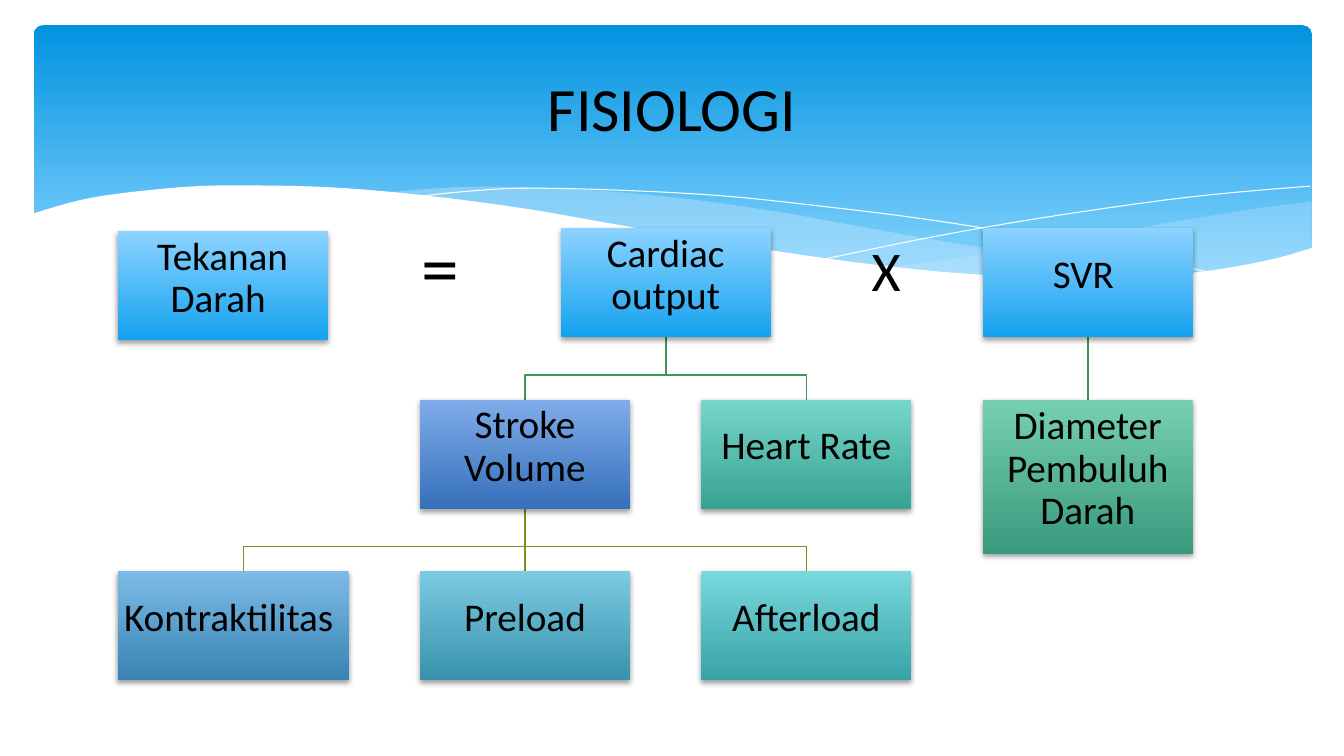
from lxml import etree
from pptx import Presentation
from pptx.dml.color import RGBColor
from pptx.enum.shapes import MSO_CONNECTOR, MSO_SHAPE
from pptx.enum.text import MSO_ANCHOR, PP_ALIGN
from pptx.oxml.ns import qn
from pptx.util import Pt

RECT, ROUND = MSO_SHAPE.RECTANGLE, MSO_SHAPE.ROUNDED_RECTANGLE
STRAIGHT, MIDDLE, CENTER = MSO_CONNECTOR.STRAIGHT, MSO_ANCHOR.MIDDLE, PP_ALIGN.CENTER

BLACK = RGBColor(0x00, 0x00, 0x00)
WHITE = RGBColor(0xFF, 0xFF, 0xFF)
MIST = RGBColor(0xC6, 0xE7, 0xFC)
GREEN = RGBColor(0x3D, 0x96, 0x53)
OLIVE = RGBColor(0x74, 0x93, 0x1C)
SKY = RGBColor(0x02, 0x93, 0xE0), RGBColor(0x83, 0xD3, 0xFE)
AZURE = RGBColor(0x8C, 0xD3, 0xFF), RGBColor(0x14, 0xA2, 0xEF)
INDIGO = RGBColor(0x80, 0xAC, 0xEA), RGBColor(0x35, 0x70, 0xBA)
STEEL = RGBColor(0x7D, 0xBB, 0xE6), RGBColor(0x38, 0x83, 0xB3)
TEAL = RGBColor(0x7B, 0xCA, 0xE2), RGBColor(0x39, 0x93, 0xAC)
AQUA = RGBColor(0x78, 0xD8, 0xDD), RGBColor(0x38, 0xA3, 0xA7)
MINT = RGBColor(0x76, 0xD7, 0xC9), RGBColor(0x38, 0xA2, 0x93)
JADE = RGBColor(0x76, 0xCF, 0xB2), RGBColor(0x3A, 0x9A, 0x7D)

FONT = "Calibri"
PAGE = 0, 0, 960, 540
WIDE, HIGH, GAP, BEND = 150, 78, 44.4, 27

MIST_TOP = [(937, 144), (897, 149), (826, 160.5), (747, 174.5), (700, 182), (635, 191)]
MIST_LOW = [(635, 191), (690, 196), (738, 199), (791, 200), (837, 198),
            (877, 192.5), (911.5, 185), (937, 178)]
BAND_TOP = [(857, 196.5), (803.5, 191), (744.5, 183), (677.5, 173), (604, 160),
            (560, 152), (506, 144), (446, 137.5), (383, 134), (330.5, 133.5), (275, 137.5)]
BAND_LOW = [(275, 137.5), (328, 143), (388, 152), (431, 160), (508, 173), (577, 183.5),
            (639, 191.5), (693.5, 197), (753, 200), (805, 200), (857, 196.5)]
FALL = [(297, 140.5), (330, 137), (371.5, 134.5), (432, 135.5), (511, 139.5),
        (584, 147), (667.5, 157.5), (763, 173.5), (871, 196)]
RISE = [(589, 185), (667.5, 169), (745, 155.5), (831.5, 143), (887, 137), (936, 133)]
CREST = [(22, 153), (57, 143), (91, 137.5), (140, 133), (186, 132.5), (240, 134),
         (303, 139.5), (375, 149), (429, 158.4), (508, 172), (579, 183), (641.5, 191),
         (698, 196), (776, 199.5), (829, 197), (873, 192), (911.5, 184.5), (937.5, 177)]
BASE = [(937.5, 237), (22, 237)]


def curve(knots, steps=4):
    """Return points of a smooth curve through the knots."""
    ends = [knots[0], *knots, knots[-1]]
    dots = []
    for a, b, c, d in zip(ends, ends[1:], ends[2:], ends[3:]):
        for step in range(steps):
            t = step / steps
            dots.append(tuple(
                q + t * ((r - p) + t * ((2 * p - 5 * q + 4 * r - s)
                                        + t * (3 * (q - r) + s - p))) / 2
                for p, q, r, s in zip(a, b, c, d)))
    return dots + [knots[-1]]


def trace(slide, dots, close=False):
    """Draw a plain outline through points."""
    spots = [(Pt(x), Pt(y)) for x, y in dots]
    pen = slide.shapes.build_freeform(*spots[0], scale=1.0)
    pen.add_line_segments(spots[1:], close=close)
    form = pen.convert_to_shape()
    form.shadow.inherit = False
    form.fill.background()
    form.line.fill.background()
    return form


def stroke(line, color, width):
    """Set the colour and width of a line."""
    line.color.rgb = color
    line.width = Pt(width)


def shade(shape, colors, end=1):
    """Fill a shape from top to bottom and clear its line and shadow."""
    shape.shadow.inherit = False
    shape.line.fill.background()
    shape.fill.gradient()
    shape.fill.gradient_angle = 270
    for stop, color, place in zip(shape.fill.gradient_stops, colors, (0, end)):
        stop.color.rgb = color
        stop.position = place


def style(frame, text, size, align=None):
    """Write one paragraph and format its run."""
    frame.word_wrap = True
    frame.text = text
    para = frame.paragraphs[0]
    para.alignment = align
    font = para.runs[0].font
    font.name, font.size, font.color.rgb = FONT, Pt(size), BLACK
    return para


def banner(slide, box):
    """Draw the blue header with its waves in the page box."""
    left, top, wide, _ = box
    back = slide.shapes.add_shape(ROUND, Pt(left + 24), Pt(top + 18), Pt(wide - 47), Pt(194.4))
    back.adjustments[0] = 0.034
    shade(back, SKY, 0.9)

    def move(dots):
        return [(left + x, top + y) for x, y in dots]

    waves = [(curve(MIST_TOP) + curve(MIST_LOW), MIST, 29),
             (curve(BAND_TOP) + curve(BAND_LOW), MIST, 40)]
    for dots, color, alpha in waves:
        wave = trace(slide, move(dots), True)
        wave.fill.solid()
        wave.fill.fore_color.rgb = color
        tint = wave.fill._xPr.find(".//" + qn("a:srgbClr"))
        etree.SubElement(tint, qn("a:alpha"), val=str(alpha * 1000))
    for knots in (FALL, RISE):
        stroke(trace(slide, move(curve(knots))).line, WHITE, 0)
    front = trace(slide, move(curve(CREST) + BASE), True)
    front.fill.solid()
    front.fill.fore_color.rgb = WHITE


def title(slide, box, text):
    """Place the title in its box, in front of the banner."""
    head = slide.shapes.title
    head.left, head.top, head.width, head.height = map(Pt, box)
    head.text_frame.vertical_anchor = MIDDLE
    style(head.text_frame, text, 44, CENTER)
    slide.shapes._spTree.append(head._element)


def card(slide, box, text, colors):
    """Draw one shaded card with its label."""
    shape = slide.shapes.add_shape(RECT, *map(Pt, box))
    shade(shape, colors)
    glow = etree.SubElement(shape._element.spPr.find(qn("a:effectLst")), qn("a:outerShdw"),
                            blurRad=str(Pt(4)), dist=str(Pt(2)), dir="5400000", rotWithShape="0")
    tone = etree.SubElement(glow, qn("a:srgbClr"), val=str(BLACK))
    etree.SubElement(tone, qn("a:alpha"), val="38000")
    frame = shape.text_frame
    frame.margin_left = frame.margin_right = frame.margin_top = Pt(1)
    frame.margin_bottom = Pt(11)
    frame.vertical_anchor = MIDDLE
    style(frame, text, 28, CENTER).line_spacing = 0.9


def link(slide, start, goal, top, color):
    """Join a card to one below it, straight or with a bend."""
    low = top + GAP
    if start == goal:
        wire = slide.shapes.add_connector(STRAIGHT, Pt(start), Pt(top), Pt(goal), Pt(low))
        etree.SubElement(wire._element.spPr, qn("a:effectLst"))
    else:
        mid = top + BEND
        wire = trace(slide, [(start, top), (start, mid), (goal, mid), (goal, low)])
    stroke(wire.line, color, 1.25)


def sign(slide, box, text, size):
    """Write one sign of the formula."""
    area = slide.shapes.add_textbox(*map(Pt, box))
    style(area.text_frame, text, size)


def chart(slide, box):
    """Draw the formula and its tree of factors in the box."""
    left, top, _, _ = box
    rows = [top + i * (HIGH + GAP) for i in range(3)]
    cols = [left + x for x in (0, 216, 417, 618)]
    mids = [x + WIDE / 2 for x in cols]
    hub = (mids[1] + mids[2]) / 2
    links = [(mids[3], mids[3], 0, GREEN), (hub, mids[2], 0, GREEN),
             (mids[1], mids[2], 1, OLIVE), (mids[1], mids[1], 1, OLIVE),
             (mids[1], left + 90, 1, OLIVE), (hub, mids[1], 0, GREEN)]
    for start, goal, row, color in links:
        link(slide, start, goal, rows[row] + HIGH, color)
    cards = [(cols[0], rows[0] + 2, WIDE, HIGH, "Tekanan Darah ", AZURE),
             (hub - WIDE / 2, rows[0], WIDE, HIGH, "Cardiac output", AZURE),
             (cols[1], rows[1], WIDE, HIGH, "Stroke Volume", INDIGO),
             (cols[0], rows[2], 165, HIGH, "Kontraktilitas ", STEEL),
             (cols[1], rows[2], WIDE, HIGH, "Preload", TEAL),
             (cols[2], rows[2], WIDE, HIGH, "Afterload", AQUA),
             (cols[2], rows[1], WIDE, HIGH, "Heart Rate", MINT),
             (cols[3], rows[0], WIDE, HIGH, "SVR ", AZURE),
             (cols[3], rows[1], WIDE, 110, "Diameter Pembuluh Darah", JADE)]
    for *place, text, colors in cards:
        card(slide, place, text, colors)
    sign(slide, (left + 210, top - 9.5, 56, 72.7), "=", 54)
    sign(slide, (left + 531.5, top + 2, 46, 55.7), "X", 40)


def main():
    """Build the slide and save it."""
    deck = Presentation()
    deck.slide_width, deck.slide_height = Pt(PAGE[2]), Pt(PAGE[3])
    slide = deck.slides.add_slide(deck.slide_layouts[5])
    banner(slide, PAGE)
    title(slide, (48, 27, 864, 98.5), "FISIOLOGI")
    chart(slide, (84, 163, 768, 322.8))
    deck.save("out.pptx")


if __name__ == "__main__":
    main()
